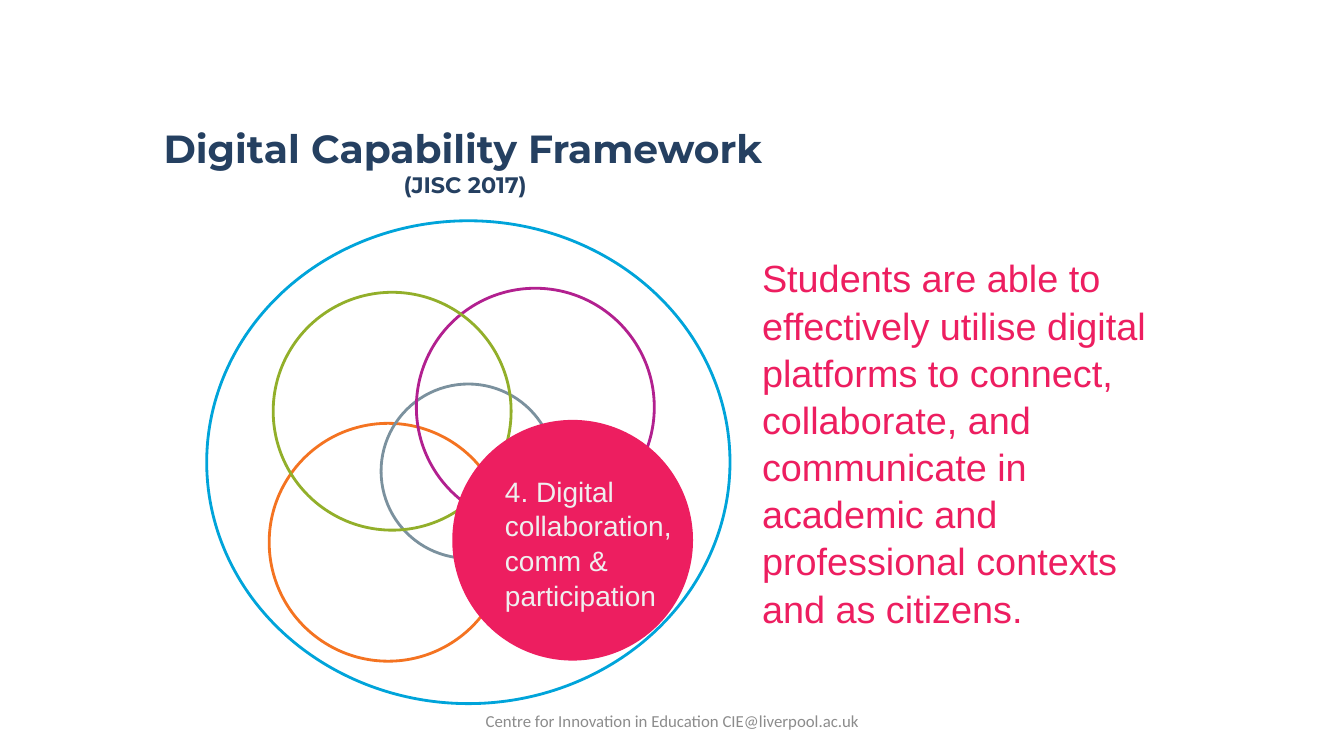
import copy
from dataclasses import dataclass

import pptx
import pptx.dml.color
import pptx.enum.shapes
import pptx.enum.text
import pptx.util

ALIGN = pptx.enum.text.PP_ALIGN
ANCHOR = pptx.enum.text.MSO_ANCHOR


@dataclass(frozen=True)
class Theme:
    navy: str = "254061"
    pink: str = "ED1E60"
    orange: str = "F47321"
    slate: str = "7B919E"
    purple: str = "B2208F"
    green: str = "92AF2A"
    blue: str = "00A4DA"
    pale: str = "EFEFEF"
    grey: str = "8C8C8C"
    title_size: int = 28
    citation_size: int = 16
    statement_size: int = 27
    label_size: int = 20
    footer_size: int = 12
    outline: int = 2
    title_font: str = "Montserrat"
    body_font: str = "Arial"
    footer_font: str = "Calibri"
    line_spacing: float = 1.04


def px(length):
    """100 px to the inch."""
    return pptx.util.Emu(length * 9144)


def rgb(color):
    return pptx.dml.color.RGBColor.from_string(color)


class SlideBuilder:
    def __init__(self, slide, theme):
        self.slide = slide
        self.theme = theme

    def style(self, font, name, size, color, bold=False):
        font.name = name
        font.size = pptx.util.Pt(size)
        font.bold = bold
        font.color.rgb = rgb(color)

    def title(self, heading, citation, left, top, width, height):
        shape = self.slide.shapes.title
        shape.left, shape.top, shape.width, shape.height = map(px, (left, top, width, height))
        frame = shape.text_frame
        frame.auto_size = pptx.enum.text.MSO_AUTO_SIZE.NONE
        frame.vertical_anchor = ANCHOR.MIDDLE
        frame.text = f"{heading} \v{citation} "
        paragraph = frame.paragraphs[0]
        paragraph.alignment = ALIGN.CENTER
        sizes = (self.theme.title_size, self.theme.citation_size)
        for run, size in zip(paragraph.runs, sizes):
            self.style(run.font, self.theme.title_font, size, self.theme.navy, bold=True)
        # The line break takes the size of the smaller line
        line_break = paragraph.runs[0].font._element.getparent().getnext()
        line_break.append(copy.deepcopy(paragraph.runs[1].font._element))

    def circle(self, color, left, top, width, height, filled=False):
        shape = self.slide.shapes.add_shape(
            pptx.enum.shapes.MSO_SHAPE.OVAL, *map(px, (left, top, width, height)))
        shape.shadow.inherit = False
        shape.line.color.rgb = rgb(color)
        shape.line.width = pptx.util.Pt(self.theme.outline)
        if filled:
            shape.fill.solid()
            shape.fill.fore_color.rgb = rgb(color)
        else:
            shape.fill.background()

    def text(self, words, left, top, width, height, font, size, color,
             anchor=ANCHOR.MIDDLE, align=ALIGN.LEFT, spacing=1.0):
        shape = self.slide.shapes.add_textbox(*map(px, (left, top, width, height)))
        frame = shape.text_frame
        frame.word_wrap = True
        frame.vertical_anchor = anchor
        frame.text = words
        paragraph = frame.paragraphs[0]
        paragraph.alignment = align
        paragraph.line_spacing = spacing
        self.style(paragraph.runs[0].font, font, size, color)


def main():
    theme = Theme()
    presentation = pptx.Presentation()
    presentation.slide_width, presentation.slide_height = px(1333), px(750)
    slide = presentation.slides.add_slide(presentation.slide_layouts[5])
    builder = SlideBuilder(slide, theme)

    # Footer and statement
    builder.text("Centre for Innovation in Education CIE@liverpool.ac.uk",
                 456, 695, 422, 40, theme.footer_font, theme.footer_size, theme.grey,
                 align=ALIGN.CENTER)
    builder.text("Students are able to effectively utilise digital platforms to connect, "
                 "collaborate, and communicate in academic and professional contexts "
                 "and as citizens.",
                 746, 258, 404, 361, theme.body_font, theme.statement_size, theme.pink,
                 spacing=theme.line_spacing)

    # Capability circles, from back to front
    diameter = 236
    builder.circle(theme.orange, 267, 420, diameter, diameter)
    builder.circle(theme.slate, 378, 381, 173, 173)
    builder.circle(theme.purple, 413, 286, diameter, diameter)
    builder.circle(theme.green, 271, 290, diameter, diameter)
    builder.circle(theme.blue, 205, 219, 519, 479)
    builder.circle(theme.pink, 450, 418, diameter, diameter, filled=True)

    # Label of the highlighted capability
    builder.text("4. Digital collaboration, comm & participation",
                 491, 464, 196, 145, theme.body_font, theme.label_size, theme.pale,
                 anchor=ANCHOR.TOP, spacing=theme.line_spacing)

    # Title
    builder.title("Digital Capability Framework", "(JISC 2017)", -102, 79, 1133, 161)

    presentation.save("out.pptx")


if __name__ == "__main__":
    main()
